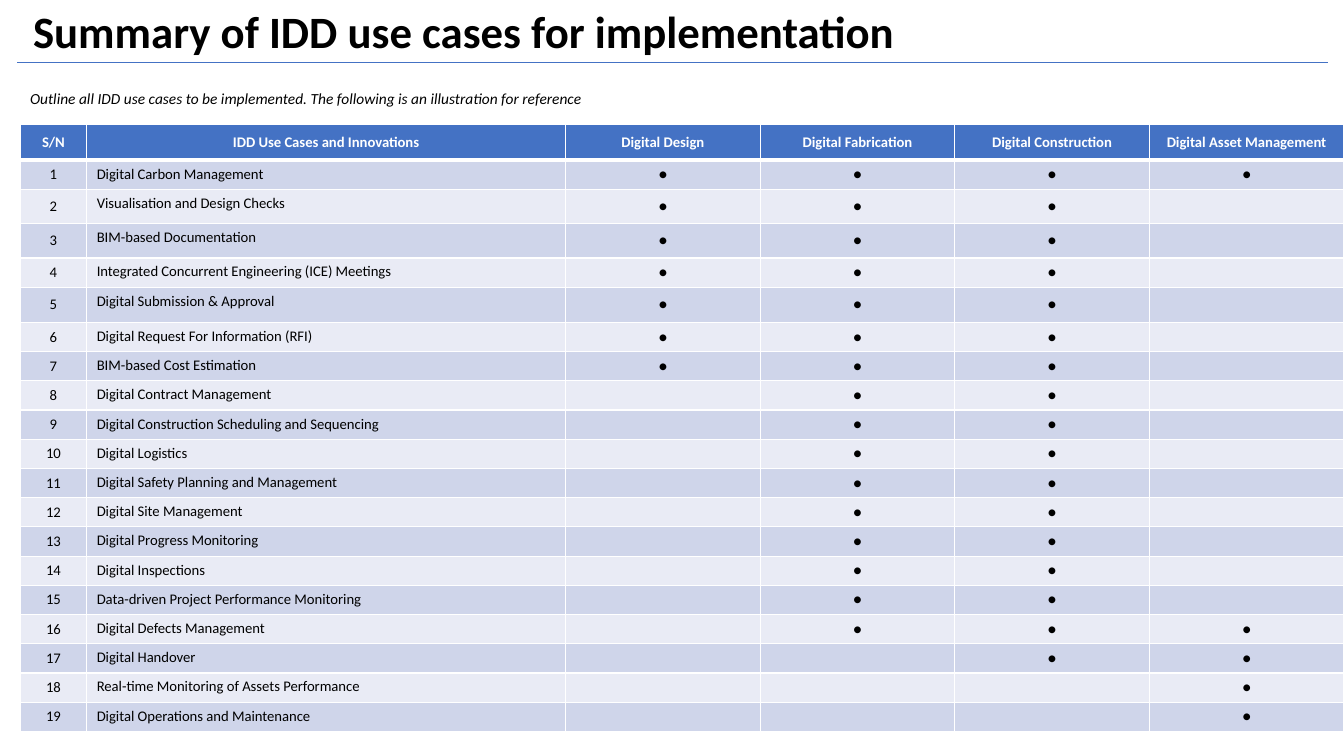
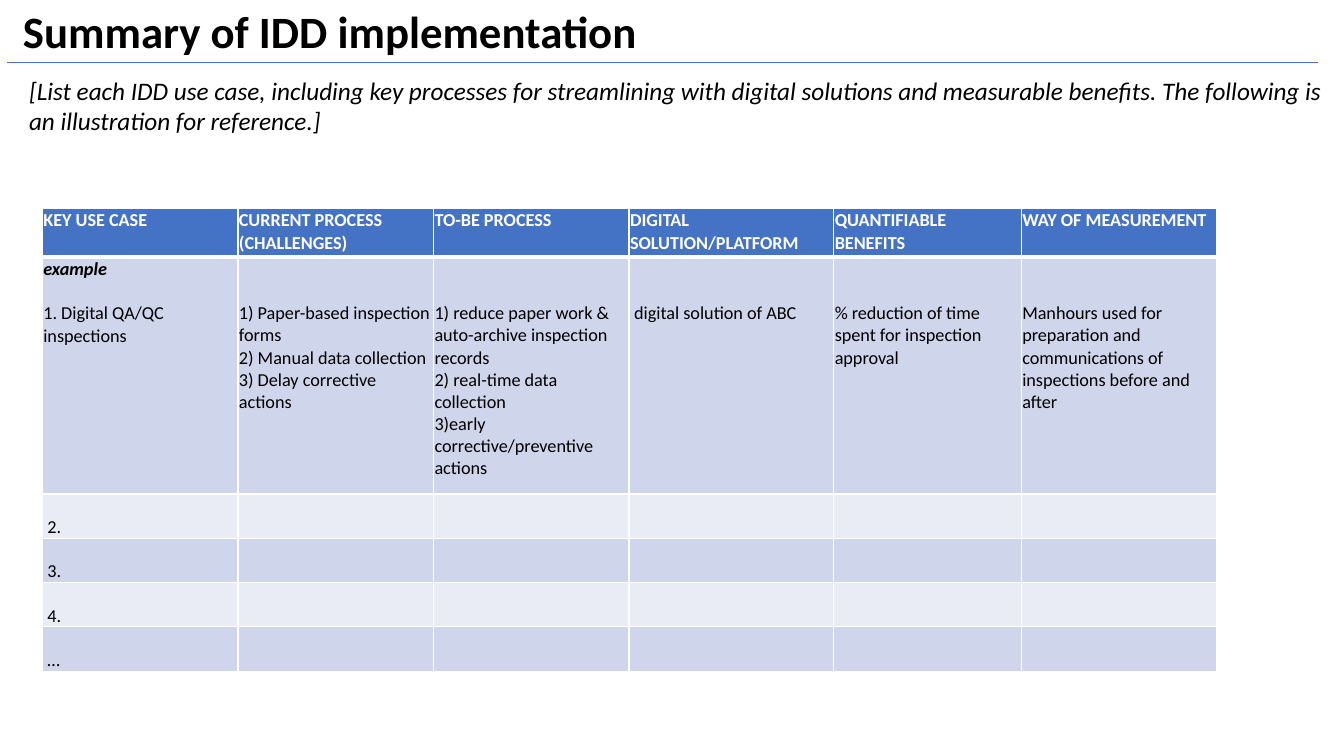
import pptx
import pptx.dml.color
import pptx.enum.shapes
import pptx.enum.text
import pptx.oxml.ns
import pptx.util
from lxml import etree

Inches = pptx.util.Inches
Pt = pptx.util.Pt
ALIGN = pptx.enum.text.PP_ALIGN
ANCHOR = pptx.enum.text.MSO_ANCHOR
qn = pptx.oxml.ns.qn

# Shared style
FONT = "Calibri"
COLORS = {"text": "000000", "header": "4472C4", "white": "FFFFFF",
          "band_dark": "CFD5EA", "band_light": "E9EBF5"}
RULE_WIDTH = 13.0

# Slide 1: each use case with the first and last stage it covers
STAGES = ["Digital Design", "Digital Fabrication", "Digital Construction",
          "Digital Asset Management"]
USE_CASES = [
    ("Digital Carbon Management", 0, 3),
    ("Visualisation and Design Checks", 0, 2),
    ("BIM-based Documentation", 0, 2),
    ("Integrated Concurrent Engineering (ICE) Meetings", 0, 2),
    ("Digital Submission & Approval", 0, 2),
    ("Digital Request For Information (RFI)", 0, 2),
    ("BIM-based Cost Estimation", 0, 2),
    ("Digital Contract Management", 1, 2),
    ("Digital Construction Scheduling and Sequencing", 1, 2),
    ("Digital Logistics", 1, 2),
    ("Digital Safety Planning and Management", 1, 2),
    ("Digital Site Management", 1, 2),
    ("Digital Progress Monitoring", 1, 2),
    ("Digital Inspections", 1, 2),
    ("Data-driven Project Performance Monitoring", 1, 2),
    ("Digital Defects Management", 1, 3),
    ("Digital Handover", 2, 3),
    ("Real-time Monitoring of Assets Performance", 3, 3),
    ("Digital Operations and Maintenance", 3, 3),
]
TALL_ROWS = {2: 0.34, 3: 0.34, 5: 0.35}

# Slide 2
PROCESS_ROWS = [
    ["KEY USE CASE", "CURRENT PROCESS (CHALLENGES)", "TO-BE PROCESS",
     "DIGITAL SOLUTION/PLATFORM", "QUANTIFIABLE BENEFITS", "WAY OF MEASUREMENT"],
    ["example\n1. Digital QA/QC inspections",
     "1) Paper-based inspection forms\n2) Manual data collection\n"
     "3) Delay corrective actions",
     "1) reduce paper work & auto-archive inspection records\n"
     "2) real-time data collection\n3)early corrective/preventive actions",
     "digital solution of ABC",
     "% reduction of time spent for inspection approval",
     "Manhours used for preparation and communications of inspections "
     "before and after"],
] + [[label] + [""] * 5 for label in ("2.", "3.", "4.", "…")]


def rgb(name):
    return pptx.dml.color.RGBColor.from_string(COLORS[name])


def format_text(tf, size, color="text", bold=False, italic=False):
    for p in tf.paragraphs:
        for r in p.runs:
            r.font.name = FONT
            r.font.size = Pt(size)
            r.font.bold = bold
            r.font.italic = italic
            r.font.color.rgb = rgb(color)
        if not p.runs:  # an empty cell must not force a taller row
            etree.SubElement(p._p, qn("a:endParaRPr"), sz=str(int(size * 100)))


def add_text(s, box, text, size, **style):
    sp = s.shapes.add_textbox(*[Inches(v) for v in box])
    tf = sp.text_frame
    tf.word_wrap = True
    tf.text = text
    format_text(tf, size, **style)
    return tf


def add_title(s, left, text):
    tf = add_text(s, (left, 0, RULE_WIDTH, 0.68), text, 32, bold=True)
    tf.vertical_anchor = ANCHOR.MIDDLE
    tf.paragraphs[0].line_spacing = 0.9
    x, y = left - 0.06, Inches(0.62)
    rule = s.shapes.add_connector(pptx.enum.shapes.MSO_CONNECTOR.STRAIGHT,
                                  Inches(x), y, Inches(x + RULE_WIDTH), y)
    rule.line.color.rgb = rgb("header")
    rule.line.width = Pt(0.5)
    etree.SubElement(rule._element.spPr, qn("a:effectLst"))


def set_borders(cell, top, bottom):
    tcPr = cell._tc.get_or_add_tcPr()
    for side, width in (("L", 1), ("R", 1), ("T", top), ("B", bottom)):
        ln = etree.SubElement(tcPr, qn("a:ln" + side), w=str(Pt(width)))
        fill = etree.SubElement(ln, qn("a:solidFill"))
        etree.SubElement(fill, qn("a:srgbClr"), val=COLORS["white"])


def add_grid(s, left, top, widths, heights, rows, size):
    """Add a table with a blue header row and two alternating body bands."""
    frame = s.shapes.add_table(len(rows), len(widths), Inches(left), Inches(top),
                               Inches(sum(widths)), Inches(sum(heights)))
    table = frame.table
    table.first_row = table.horz_banding = False
    for column, width in zip(table.columns, widths):
        column.width = Inches(width)
    for i, (row, height) in enumerate(zip(rows, heights)):
        table.rows[i].height = Inches(height)
        header = i == 0
        band = "header" if header else "band_dark" if i % 2 else "band_light"
        for j, text in enumerate(row):
            cell = table.cell(i, j)
            set_borders(cell, 3 if i == 1 else 1, 3 if header else 1)
            cell.fill.solid()
            cell.fill.fore_color.rgb = rgb(band)
            cell.text_frame.text = text
            format_text(cell.text_frame, size, "white" if header else "text", header)
    return table


def build_use_cases(s):
    add_title(s, 0.23, "Summary of IDD use cases for implementation")
    add_text(s, (0.2, 0.83, 13.13, 0.29),
             "Outline all IDD use cases to be implemented. "
             "The following is an illustration for reference", 11, italic=True)
    rows = [["S/N", "IDD Use Cases and Innovations"] + STAGES]
    for number, (name, first, last) in enumerate(USE_CASES, 1):
        marks = ["●" if first <= k <= last else "" for k in range(len(STAGES))]
        rows.append([str(number), name] + marks)
    heights = [0.36] + [TALL_ROWS.get(i, 0.29) for i in range(1, len(rows))]
    table = add_grid(s, 0.2, 1.23, [0.66, 4.75] + [1.93] * 4, heights, rows, 10.5)
    # Everything is centred except the use case names
    for i in range(len(rows)):
        for j in range(len(rows[0])):
            if i == 0 or j != 1:
                cell = table.cell(i, j)
                cell.vertical_anchor = ANCHOR.MIDDLE
                cell.text_frame.paragraphs[0].alignment = ALIGN.CENTER


def build_process(s):
    add_title(s, 0.13, "Summary of IDD implementation")
    add_text(s, (0.19, 0.7, 13.07, 0.71),
             "[List each IDD use case, including key processes for streamlining with "
             "digital solutions and measurable benefits. The following is an "
             "illustration for reference.]", 18, italic=True)
    table = add_grid(s, 0.42, 2.07, [1.94, 1.94, 1.94, 2.03, 1.86, 1.94],
                     [0.48, 2.35] + [0.44] * 4, PROCESS_ROWS, 13)
    for cell in table.iter_cells():
        cell.margin_left = cell.margin_right = cell.margin_top = Inches(0.01)
        cell.margin_bottom = 0
    # The example's details start level with its name, below the label
    for j in range(1, 6):
        table.cell(1, j).margin_top = Inches(0.45)
    table.cell(1, 3).margin_left = Inches(0.05)
    label, name = table.cell(1, 0).text_frame.paragraphs
    label.runs[0].font.bold = label.runs[0].font.italic = True
    name.space_before = Pt(16)
    # Numbers of the open rows
    for i in range(2, len(PROCESS_ROWS)):
        cell = table.cell(i, 0)
        cell.vertical_anchor = ANCHOR.BOTTOM
        cell.margin_left = Inches(0.05)


def main():
    prs = pptx.Presentation()
    prs.slide_width, prs.slide_height = Inches(13.33), Inches(7.5)
    for build in (build_use_cases, build_process):
        build(prs.slides.add_slide(prs.slide_layouts[6]))
    prs.save("out.pptx")


if __name__ == "__main__":
    main()
